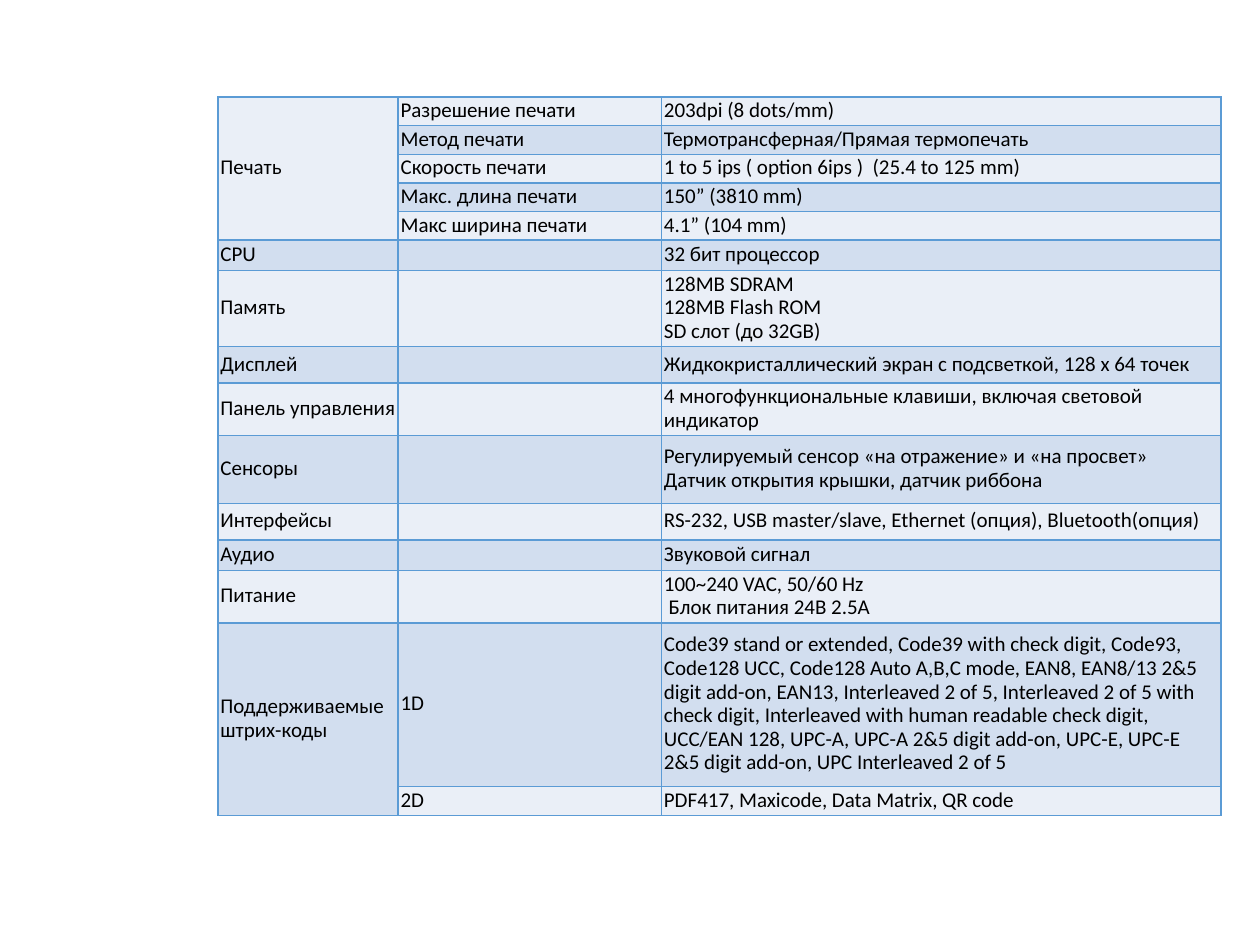
from dataclasses import dataclass

from lxml.etree import SubElement
from pptx import Presentation
from pptx.dml.color import RGBColor
from pptx.enum.text import MSO_ANCHOR
from pptx.oxml.ns import qn
from pptx.util import Inches, Pt


@dataclass(frozen=True)
class Theme:
    """Colours, type and spacing of the slide."""
    font: str = "Calibri"
    size: int = Pt(12)
    leading: int = Pt(13.5)
    margin: int = Inches(0.02)
    text: str = "000000"
    border: str = "5B9BD5"
    border_width: int = Pt(1)
    bands: tuple = ("EAEFF7", "D2DEEF")


THEME = Theme()
COLUMNS = (1.43, 2.09, 4.44)
MERGES = ((0, 4), (13, 14))
TALL_ROWS = {7: 0.29, 9: 0.54, 10: 0.29, 13: 1.3}
LINES = {6: 3, 8: 2, 12: 2}
ROWS = (
    ("Печать", "Разрешение печати", "203dpi (8 dots/mm)"),
    ("", "Метод печати", "Термотрансферная/Прямая термопечать"),
    ("", "Скорость печати", "1 to 5 ips ( option 6ips )  (25.4 to 125 mm)"),
    ("", "Макс. длина печати", "150” (3810 mm)"),
    ("", "Макс ширина печати", "4.1” (104 mm)"),
    ("CPU", "", "32 бит процессор"),
    ("Память", "", "128MB SDRAM\v128MB Flash ROM\vSD слот (до 32GB)"),
    ("Дисплей", "", "Жидкокристаллический экран с подсветкой, 128 x 64 точек"),
    ("Панель управления", "",
     "4 многофункциональные клавиши, включая световой индикатор"),
    ("Сенсоры", "", "Регулируемый сенсор «на отражение» и «на просвет»\v"
     "Датчик открытия крышки, датчик риббона"),
    ("Интерфейсы", "",
     "RS-232, USB master/slave, Ethernet (опция), Bluetooth(опция)"),
    ("Аудио", "", "Звуковой сигнал"),
    ("Питание", "", "100~240 VAC, 50/60 Hz\n Блок питания 24В 2.5А"),
    ("Поддерживаемые штрих-коды", "1D",
     "Code39 stand or extended, Code39 with check digit, Code93, "
     "Code128 UCC, Code128 Auto A,B,C mode, EAN8, EAN8/13 2&5 digit add-on, "
     "EAN13, Interleaved 2 of 5, Interleaved 2 of 5 with check digit, "
     "Interleaved with human readable check digit, UCC/EAN 128, UPC-A, "
     "UPC-A 2&5 digit add-on, UPC-E, UPC-E 2&5 digit add-on, "
     "UPC Interleaved 2 of 5"),
    ("", "2D", "PDF417, Maxicode, Data Matrix, QR code"),
)


def add_borders(cell):
    """Draw a thin line on all four sides of a cell."""
    tc_pr = cell._tc.get_or_add_tcPr()
    for side in ("lnL", "lnR", "lnT", "lnB"):
        ln = SubElement(tc_pr, qn(f"a:{side}"), w=str(int(THEME.border_width)))
        fill = SubElement(ln, qn("a:solidFill"))
        SubElement(fill, qn("a:srgbClr"), val=THEME.border)


def fill_cell(cell, text, band):
    """Write and format one cell on its row's band colour."""
    add_borders(cell)
    cell.fill.solid()
    cell.fill.fore_color.rgb = RGBColor.from_string(band)
    cell.vertical_anchor = MSO_ANCHOR.MIDDLE
    cell.margin_left = cell.margin_right = THEME.margin
    cell.margin_top = cell.margin_bottom = THEME.margin
    cell.text = text
    for p in cell.text_frame.paragraphs:
        p.line_spacing = THEME.leading
        p.font.name = THEME.font
        p.font.size = THEME.size
        p.font.bold = False
        p.font.color.rgb = RGBColor.from_string(THEME.text)


def row_height(index):
    """Return a set height, or the height that the row's lines need."""
    if index in TALL_ROWS:
        return Inches(TALL_ROWS[index])
    return THEME.leading * LINES.get(index, 1) + 2 * THEME.margin


def add_spec_table(slide, left, top):
    """Place the printer specification table with its corner at left, top."""
    heights = [row_height(i) for i in range(len(ROWS))]
    table = slide.shapes.add_table(
        len(ROWS), len(COLUMNS), left, top,
        Inches(sum(COLUMNS)), sum(heights)).table
    table.first_row = table.horz_banding = False
    for column, width in zip(table.columns, COLUMNS):
        column.width = Inches(width)
    for i, values in enumerate(ROWS):
        table.rows[i].height = heights[i]
        for j, text in enumerate(values):
            fill_cell(table.cell(i, j), text, THEME.bands[i % 2])
    for first, last in MERGES:
        table.cell(first, 0).merge(table.cell(last, 0))


def main():
    """Build and save the slide."""
    prs = Presentation()
    prs.slide_width, prs.slide_height = Inches(10), Inches(7.5)
    slide = prs.slides.add_slide(prs.slide_layouts[6])
    add_spec_table(slide, Inches(1.73), Inches(0.77))
    prs.save("out.pptx")


if __name__ == "__main__":
    main()
